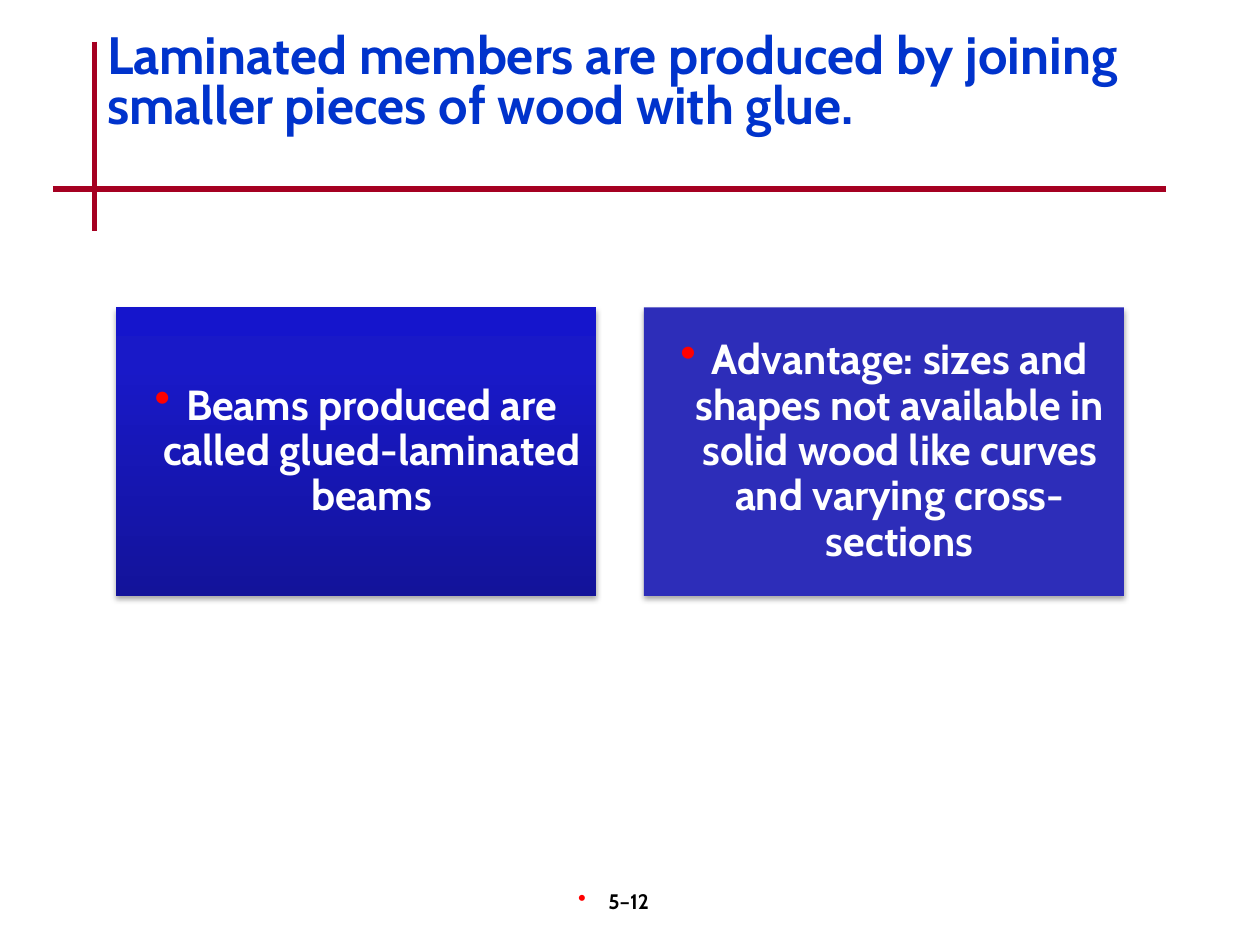
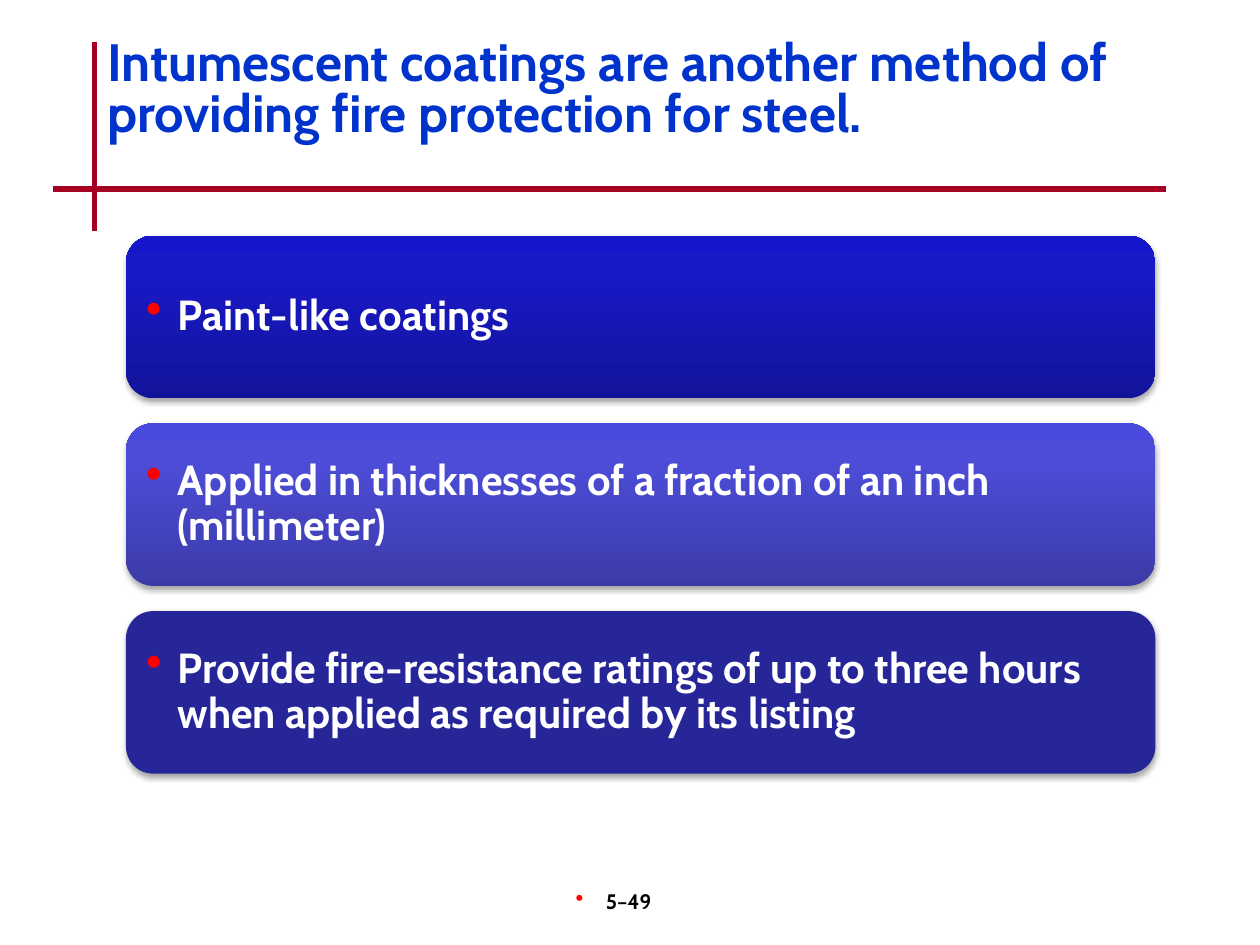
"""Build two slides on laminated wood members and intumescent coatings."""
from lxml.etree import SubElement
from pptx import Presentation
from pptx.dml.color import RGBColor
from pptx.enum.shapes import MSO_CONNECTOR, MSO_SHAPE
from pptx.enum.text import MSO_ANCHOR, MSO_AUTO_SIZE, PP_ALIGN
from pptx.oxml.ns import qn
from pptx.util import Pt

PX = 9144
FONT = "Cabin"
TITLE_BLUE = RGBColor(0x00, 0x33, 0xCC)
RULE_RED = RGBColor(0xA5, 0x00, 0x21)
BULLET_RED = RGBColor(0xFF, 0x00, 0x00)
BLACK = RGBColor(0x00, 0x00, 0x00)
WHITE = RGBColor(0xFF, 0xFF, 0xFF)
VIOLET = RGBColor(0x2D, 0x2D, 0xB9)
NAVY = RGBColor(0x26, 0x26, 0x99)
DEEP_BLUE = (RGBColor(0x13, 0x13, 0x9A), RGBColor(0x19, 0x19, 0xC8), RGBColor(0x15, 0x15, 0xCC))
SOFT_BLUE = (RGBColor(0x3B, 0x3B, 0xA8), RGBColor(0x4D, 0x4D, 0xDA), RGBColor(0x4A, 0x4A, 0xDE))
GRADIENT_STOPS = (0, 80, 100)


def add_color(parent, color):
    return SubElement(parent, qn("a:srgbClr"), val=str(color))


class Deck:
    """Hold the shared style and the current slide."""

    def __init__(self):
        self.presentation = Presentation()
        self.presentation.slide_width = 1000 * PX
        self.presentation.slide_height = 750 * PX
        self.slide = None

    def new_slide(self, title, title_top, page):
        layout = self.presentation.slide_layouts[5]
        self.slide = self.presentation.slides.add_slide(layout)
        self.rule(75, 33, 75, 183)
        self.rule(42, 150, 925, 150)
        self.page_number(page)
        self.title(title, title_top)

    def rule(self, *ends):
        connector = self.slide.shapes.add_connector(
            MSO_CONNECTOR.STRAIGHT, *(end * PX for end in ends))
        connector.line.color.rgb = RULE_RED
        connector.line.width = Pt(3)
        SubElement(connector._element.spPr, qn("a:effectLst"))

    def place(self, shape, left, top, width, height):
        shape.left, shape.top = left * PX, top * PX
        shape.width, shape.height = width * PX, height * PX

    def add_text(self, paragraph, text, size, color):
        run = paragraph.add_run()
        run.text = text
        run.font.name = FONT
        run.font.size = Pt(size)
        run.font.bold = True
        run.font.color.rgb = color

    def bullet(self, paragraph, indent):
        properties = paragraph._p.get_or_add_pPr()
        properties.set("marL", str(indent * PX))
        properties.set("indent", str(-indent * PX))
        add_color(SubElement(properties, qn("a:buClr")), BULLET_RED)
        SubElement(properties, qn("a:buSzPct"), val="110000")
        SubElement(properties, qn("a:buChar"), char="•")

    def title(self, text, top):
        title = self.slide.shapes.title
        self.place(title, 75, top, 850, 100)
        frame = title.text_frame
        frame.auto_size = MSO_AUTO_SIZE.NONE
        frame.vertical_anchor = MSO_ANCHOR.TOP
        paragraph = frame.paragraphs[0]
        paragraph.alignment = PP_ALIGN.LEFT
        paragraph.line_spacing = 0.8
        self.add_text(paragraph, text, 30, TITLE_BLUE)

    def page_number(self, text):
        box = self.slide.shapes.add_textbox(392 * PX, 700 * PX, 208 * PX, 50 * PX)
        frame = box.text_frame
        frame.word_wrap = True
        frame.margin_right = 28 * PX
        paragraph = frame.paragraphs[0]
        self.bullet(paragraph, 24)
        paragraph.alignment = PP_ALIGN.CENTER
        self.add_text(paragraph, text, 12, BLACK)

    def fill(self, shape, colors):
        if isinstance(colors, RGBColor):
            shape.fill.solid()
            shape.fill.fore_color.rgb = colors
            return
        shape.fill.gradient()
        shape.fill.gradient_angle = 90
        stops = shape._element.spPr.find(qn("a:gradFill")).find(qn("a:gsLst"))
        for stop in list(stops):
            stops.remove(stop)
        for position, color in zip(GRADIENT_STOPS, colors):
            add_color(SubElement(stops, qn("a:gs"), pos=str(position * 1000)), color)

    def shadow(self, shape):
        shape.shadow.inherit = False
        effects = shape._element.spPr.find(qn("a:effectLst"))
        outer = SubElement(effects, qn("a:outerShdw"), blurRad=str(Pt(3.1)),
                           dist=str(Pt(1.8)), dir="5400000", rotWithShape="0")
        SubElement(add_color(outer, BLACK), qn("a:alpha"), val="35000")

    def card(self, kind, bounds, colors, text, alignment):
        shape = self.slide.shapes.add_shape(kind, *(length * PX for length in bounds))
        self.fill(shape, colors)
        shape.line.fill.background()
        self.shadow(shape)
        frame = shape.text_frame
        frame.word_wrap = True
        frame.vertical_anchor = MSO_ANCHOR.MIDDLE
        frame.margin_left = frame.margin_right = 10 * PX
        frame.margin_top = frame.margin_bottom = 10 * PX
        paragraph = frame.paragraphs[0]
        self.bullet(paragraph, 25)
        paragraph.alignment = alignment
        paragraph.line_spacing = 0.9
        self.add_text(paragraph, text, 24, WHITE)


def main():
    deck = Deck()

    deck.new_slide("Laminated members are produced by joining smaller pieces of wood with glue.",
                   22, "5–12")
    columns = (
        (DEEP_BLUE, "Beams produced are called glued-laminated beams"),
        (VIOLET, "Advantage: sizes and shapes not available in solid wood "
                 "like curves and varying cross-sections"),
    )
    for column, (colors, text) in enumerate(columns):
        deck.card(MSO_SHAPE.RECTANGLE, (92 + 419 * column, 244, 381, 229),
                  colors, text, PP_ALIGN.CENTER)

    deck.new_slide("Intumescent coatings are another method of providing fire protection for steel.",
                   28, "5–49")
    rows = (
        (DEEP_BLUE, "Paint-like coatings"),
        (SOFT_BLUE, "Applied in thicknesses of a fraction of an inch (millimeter)"),
        (NAVY, "Provide fire-resistance ratings of up to three hours "
               "when applied as required by its listing"),
    )
    for row, (colors, text) in enumerate(rows):
        deck.card(MSO_SHAPE.ROUNDED_RECTANGLE, (100, 187 + 149 * row, 817, 129),
                  colors, text, PP_ALIGN.LEFT)

    deck.presentation.save("out.pptx")


if __name__ == "__main__":
    main()
